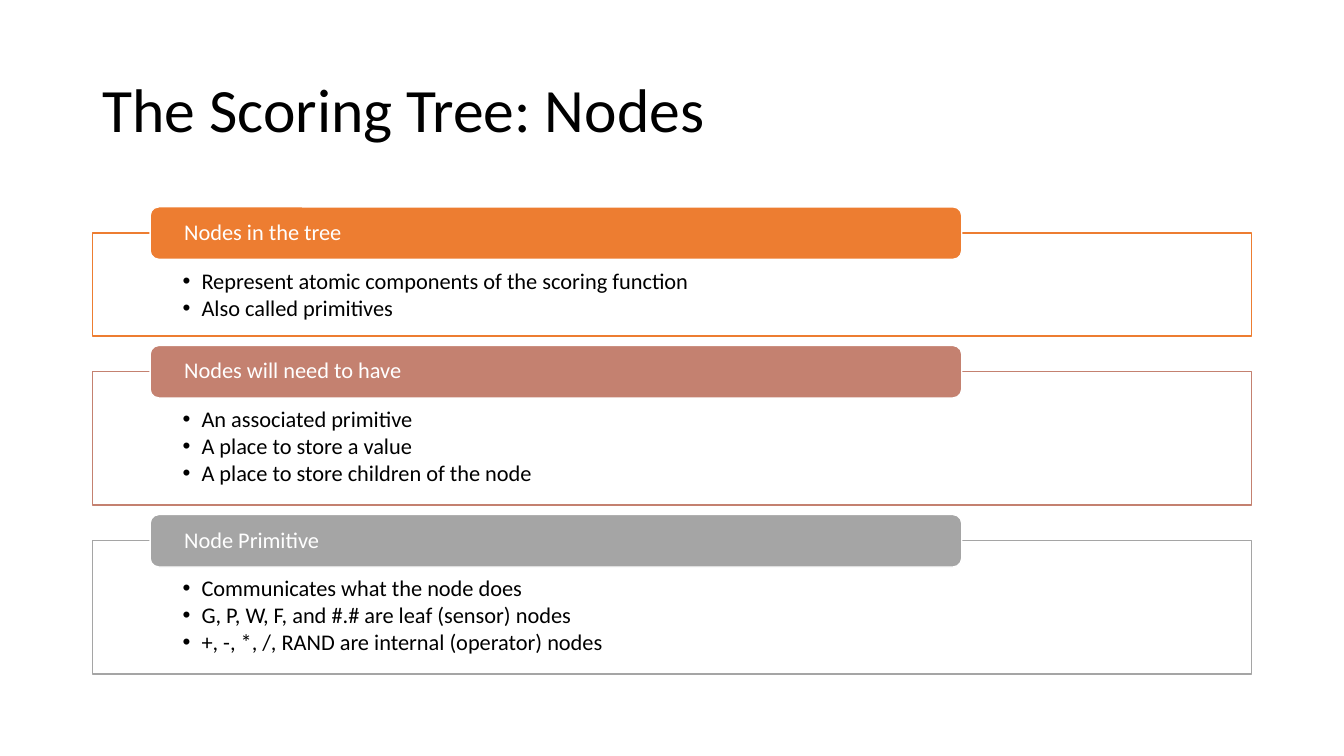
from dataclasses import dataclass

from lxml import etree
from pptx import Presentation
from pptx.dml.color import RGBColor
from pptx.enum.shapes import MSO_SHAPE
from pptx.enum.text import MSO_ANCHOR, MSO_AUTO_SIZE, PP_ALIGN
from pptx.oxml.ns import qn
from pptx.util import Pt

RECT, ROUND_RECT = MSO_SHAPE.RECTANGLE, MSO_SHAPE.ROUNDED_RECTANGLE
TOP, MIDDLE = MSO_ANCHOR.TOP, MSO_ANCHOR.MIDDLE
LEFT = PP_ALIGN.LEFT
NO_AUTOFIT = MSO_AUTO_SIZE.NONE
TITLE_ONLY = 5
EMU_PER_PX = 9525


@dataclass(frozen=True)
class Theme:
    font: str = "Calibri"
    text: str = "000000"
    white: str = "FFFFFF"
    orange: str = "ED7D31"
    rose: str = "C48170"
    gray: str = "A5A5A5"
    title_size: int = 44
    body_size: int = 16


@dataclass(frozen=True)
class Section:
    heading: str
    color: str
    height: int
    bullets: tuple[str, ...]


THEME = Theme()
SECTIONS = (
    Section("Nodes in the tree", THEME.orange, 98, (
        "Represent atomic components of the scoring function",
        "Also called primitives")),
    Section("Nodes will need to have", THEME.rose, 127, (
        "An associated primitive",
        "A place to store a value",
        "A place to store children of the node")),
    Section("Node Primitive", THEME.gray, 127, (
        "Communicates what the node does",
        "G, P, W, F, and #.# are leaf (sensor) nodes",
        "+, -, *, /, RAND are internal (operator) nodes")),
)

# Layout in px
MARGIN, CONTENT_W = 88, 1104
FIRST_TOP, GAP = 222, 34
HEADER_X, HEADER_W, HEADER_H = 143, 773, 50
BULLET_INDENT = 18


def px(n: int) -> int:
    return n * EMU_PER_PX


def rgb(color: str) -> RGBColor:
    return RGBColor.from_string(color)


def write(tf, lines: tuple[str, ...], size: int, color: str, anchor) -> None:
    tf.word_wrap = True
    tf.auto_size = NO_AUTOFIT
    tf.vertical_anchor = anchor
    tf.text = "\n".join(lines)
    for p in tf.paragraphs:
        p.alignment = LEFT
        p.line_spacing = 0.9
        for r in p.runs:
            r.font.name = THEME.font
            r.font.size = Pt(size)
            r.font.color.rgb = rgb(color)


def set_insets(tf, side: int, top: int, bottom: int) -> None:
    tf.margin_left = tf.margin_right = px(side)
    tf.margin_top, tf.margin_bottom = px(top), px(bottom)


def add_bullet(p) -> None:
    p.space_after = Pt(2)
    pPr = p._p.get_or_add_pPr()
    pPr.set("marL", str(px(BULLET_INDENT)))
    pPr.set("indent", str(-px(BULLET_INDENT)))
    etree.SubElement(pPr, qn("a:buFont")).set("typeface", "Arial")
    etree.SubElement(pPr, qn("a:buChar")).set("char", "•")


def add_panel(s, kind, x: int, y: int, w: int, h: int, fill: str, line: str):
    sp = s.shapes.add_shape(kind, px(x), px(y), px(w), px(h))
    sp.shadow.inherit = False
    sp.fill.solid()
    sp.fill.fore_color.rgb = rgb(fill)
    sp.line.color.rgb = rgb(line)
    sp.line.width = Pt(1)
    return sp


def add_section(s, section: Section, top: int) -> None:
    # Outlined body with bullets
    tf = add_panel(s, RECT, MARGIN, top, CONTENT_W, section.height,
                   THEME.white, section.color).text_frame
    write(tf, section.bullets, THEME.body_size, THEME.text, TOP)
    set_insets(tf, 86, 35, 12)
    for p in tf.paragraphs:
        add_bullet(p)

    # Header centred on the body's top edge
    tf = add_panel(s, ROUND_RECT, HEADER_X, top - HEADER_H // 2, HEADER_W, HEADER_H,
                   section.color, THEME.white).text_frame
    write(tf, (section.heading,), THEME.body_size, THEME.white, MIDDLE)
    set_insets(tf, 30, 0, 0)


def main() -> None:
    prs = Presentation()
    prs.slide_width, prs.slide_height = px(1280), px(720)
    s = prs.slides.add_slide(prs.slide_layouts[TITLE_ONLY])

    # Title
    title = s.shapes.title
    title.left, title.top = px(MARGIN), px(38)
    title.width, title.height = px(CONTENT_W), px(139)
    write(title.text_frame, ("The Scoring Tree: Nodes",),
          THEME.title_size, THEME.text, MIDDLE)

    # Stacked sections
    top = FIRST_TOP
    for section in SECTIONS:
        add_section(s, section, top)
        top += section.height + GAP

    prs.save("out.pptx")


if __name__ == "__main__":
    main()
